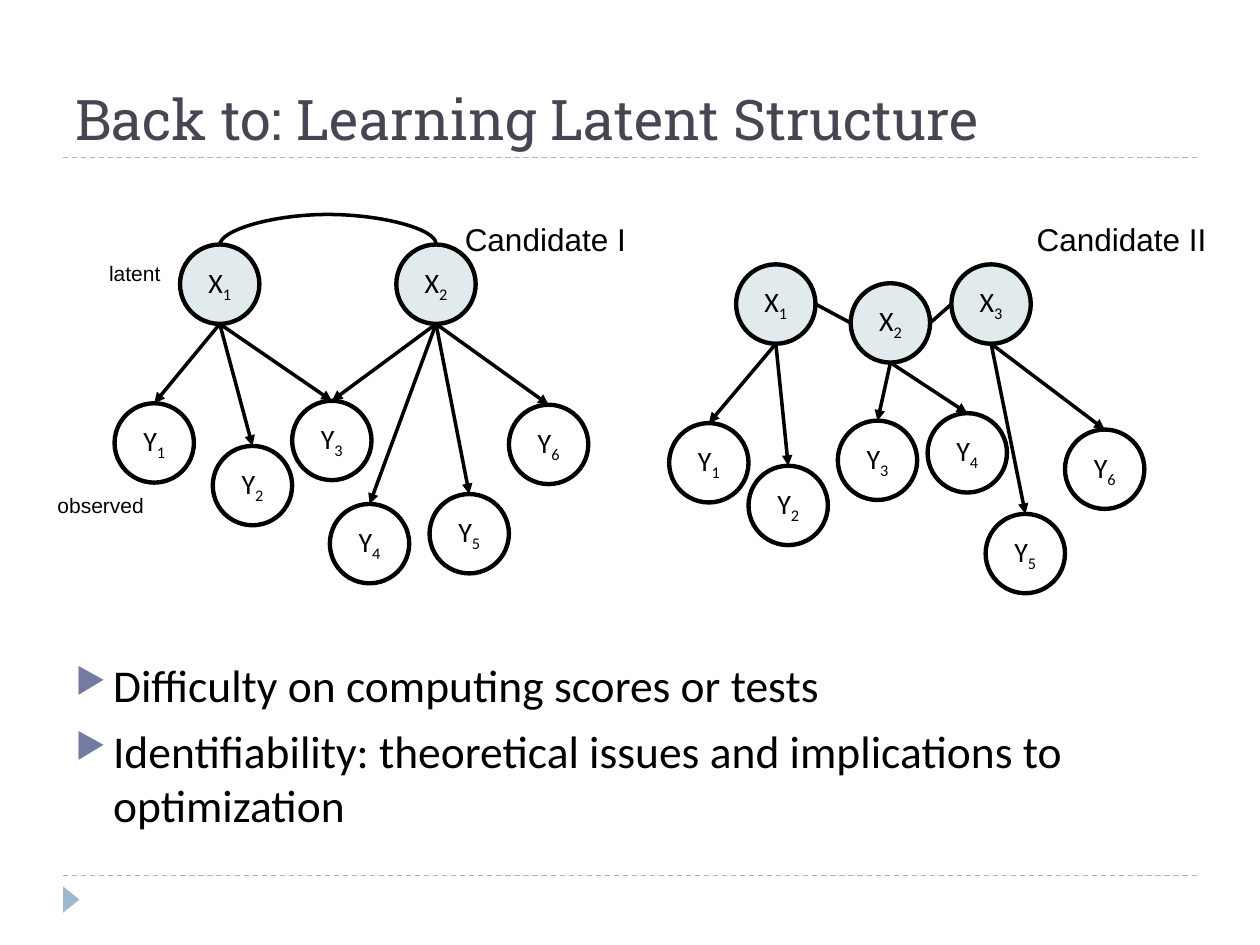
from lxml.etree import SubElement
from pptx import Presentation
from pptx.dml.color import RGBColor
from pptx.enum.dml import MSO_LINE
from pptx.enum.shapes import MSO_CONNECTOR, MSO_SHAPE
from pptx.enum.text import MSO_ANCHOR, PP_ALIGN
from pptx.oxml.ns import qn
from pptx.util import Cm, Pt

BLACK = RGBColor(0x00, 0x00, 0x00)
WHITE = RGBColor(0xFF, 0xFF, 0xFF)
PALE_BLUE = RGBColor(0xDD, 0xE9, 0xEC)
RULE_BLUE = RGBColor(0x9F, 0xB8, 0xCD)
TITLE_GREY = RGBColor(0x46, 0x46, 0x53)
BULLET_BLUE = RGBColor(0x72, 0x7C, 0xA3)

NODE = 1.6  # node diameter in cm


def style_font(para, name, size, color=BLACK):
    para.font.name = name
    para.font.size = Pt(size)
    para.font.color.rgb = color


def add_text(page, left, top, width, height, text, font, size,
             color=BLACK, wrap=False, anchor=MSO_ANCHOR.TOP):
    box = page.shapes.add_textbox(Cm(left), Cm(top), Cm(width), Cm(height))
    frame = box.text_frame
    frame.word_wrap = wrap
    frame.vertical_anchor = anchor
    frame.text = text
    for para in frame.paragraphs:
        style_font(para, font, size, color)
    return frame


def add_line(page, start, end, color=BLACK, width=2, arrow=False,
             kind=MSO_CONNECTOR.STRAIGHT):
    line = page.shapes.add_connector(kind, *(Cm(v) for v in (*start, *end)))
    line.line.color.rgb = color
    line.line.width = Pt(width)
    properties = line._element.spPr
    if arrow:
        SubElement(properties.find(qn("a:ln")), qn("a:tailEnd"), type="triangle")
    SubElement(properties, qn("a:effectLst"))
    return line


def add_arc(page, start, end, rise):
    """Join two points on one level by a curve that bulges upwards."""
    span, thin = end[0] - start[0], 0.03
    middle_x, middle_y = (start[0] + end[0]) / 2, start[1]
    # Drawn upright from bottom right to top left, then turned a quarter.
    arc = add_line(page,
                   (middle_x + thin / 2, middle_y + span / 2),
                   (middle_x - thin / 2, middle_y - span / 2),
                   kind=MSO_CONNECTOR.CURVE)
    properties = arc._element.spPr
    properties.find(qn("a:xfrm")).set("rot", str(90 * 60000))
    guides = properties.find(qn("a:prstGeom")).get_or_add_avLst()
    SubElement(guides, qn("a:gd"), name="adj1",
               fmla=f"val {round(rise / thin * 100000)}")


def add_node(page, left, top, name):
    """Draw a circle labelled with a letter and a subscript digit."""
    latent = name.startswith("X")
    node = page.shapes.add_shape(MSO_SHAPE.OVAL, Cm(left), Cm(top), Cm(NODE), Cm(NODE))
    node.shadow.inherit = False
    node.fill.solid()
    node.fill.fore_color.rgb = PALE_BLUE if latent else WHITE
    color = node._element.spPr.find(qn("a:solidFill")).find(qn("a:srgbClr"))
    SubElement(color, qn("a:alpha"), val="87000" if latent else "90000")
    node.line.color.rgb = BLACK
    node.line.width = Pt(2.5)
    frame = node.text_frame
    frame.vertical_anchor = MSO_ANCHOR.MIDDLE
    para = frame.paragraphs[0]
    para.alignment = PP_ALIGN.CENTER
    style_font(para, "Calibri", 16)
    para.add_run().text = name[0]
    subscript = para.add_run()
    subscript.text = name[1]
    subscript._r.get_or_add_rPr().set("baseline", "-25000")


def draw_graph(page, left, top, nodes, children):
    """Draw nodes and parent-to-child arrows; return each node's page position."""
    places = {name: (left + x, top + y) for name, (x, y) in nodes.items()}
    for name, place in places.items():
        add_node(page, *place, name)
    for parent, names in children.items():
        for child in names.split():
            add_line(page, side(places[parent], 0.5, 1), side(places[child], 0.5, 0),
                     arrow=True)
    return places


def side(place, across, down):
    """Return the point at these fractions of a node's box."""
    return place[0] + across * NODE, place[1] + down * NODE


def draw_candidate_one(page, left, top):
    nodes = {"Y1": (0, 3.2), "Y2": (1.98, 4.06), "Y3": (3.58, 3.15),
             "Y4": (4.34, 5.23), "Y5": (6.35, 5.03), "Y6": (7.95, 3.23),
             "X1": (1.32, 0), "X2": (5.68, 0)}
    places = draw_graph(page, left, top, nodes,
                        {"X1": "Y1 Y2 Y3", "X2": "Y3 Y4 Y5 Y6"})
    add_arc(page, side(places["X1"], 0.5, 0), side(places["X2"], 0.5, 0), 0.62)
    add_text(page, left - 0.36, top + 0.2, 1.55, 0.76, "latent", "Arial", 12)
    add_text(page, left - 1.4, top + 4.88, 2.26, 0.76, "observed", "Arial", 12)
    add_text(page, left + 6.81, top - 0.61, 3.78, 1.02, "Candidate I", "Arial", 18)


def draw_candidate_two(page, left, top):
    nodes = {"Y1": (0, 3.2), "Y2": (1.6, 4.06), "Y3": (3.4, 3.15),
             "Y4": (5.21, 3), "Y5": (6.38, 5.03), "Y6": (7.98, 3.33),
             "X1": (1.35, 0), "X2": (3.66, 0.38), "X3": (5.69, 0)}
    places = draw_graph(page, left, top, nodes,
                        {"X1": "Y1 Y2", "X2": "Y3 Y4", "X3": "Y5 Y6"})
    for first, second in (("X1", "X2"), ("X2", "X3")):
        add_line(page, side(places[first], 1, 0.5), side(places[second], 0, 0.5))
    add_text(page, left + 7.16, top - 1.02, 3.96, 1.02, "Candidate II", "Arial", 18)


def draw_frame(page, left, width):
    for y in (3.18, 17.65):
        rule = add_line(page, (left, y), (left + width, y), RULE_BLUE, 0.75)
        rule.line.dash_style = MSO_LINE.DASH
    marker = page.shapes.add_shape(MSO_SHAPE.ISOSCELES_TRIANGLE,
                                   Cm(left - 0.1), Cm(17.97), Cm(0.53), Cm(0.33))
    marker.rotation = 90
    marker.shadow.inherit = False
    marker.fill.solid()
    marker.fill.fore_color.rgb = RULE_BLUE
    marker.line.fill.background()


def draw_bullets(page, left, top, width, height, items):
    frame = add_text(page, left, top, width, height, "\n".join(items),
                     "Calibri", 26, wrap=True)
    for para in frame.paragraphs:
        para.space_before = Pt(6)
        properties = para._p.get_or_add_pPr()
        properties.set("marL", str(Cm(0.76)))
        properties.set("indent", str(-Cm(0.76)))
        bullet = [SubElement(properties, qn("a:buClr")),
                  SubElement(properties, qn("a:buSzPct"), val="76000"),
                  SubElement(properties, qn("a:buChar"), char="▶")]
        SubElement(bullet[0], qn("a:srgbClr"), val=str(BULLET_BLUE))
        # The schema wants bullet marks ahead of the default run properties.
        properties.append(properties.find(qn("a:defRPr")))


def main():
    deck = Presentation()
    deck.slide_width, deck.slide_height = Cm(25.4), Cm(19.05)
    page = deck.slides.add_slide(deck.slide_layouts[6])
    draw_frame(page, 1.27, 22.86)
    add_text(page, 1.27, 0.43, 22.86, 2.75, "Back to: Learning Latent Structure",
             "Roboto Slab", 32, TITLE_GREY, wrap=True, anchor=MSO_ANCHOR.BOTTOM)
    draw_bullets(page, 1.27, 13.13, 22.86, 3.99, [
        "Difficulty on computing scores or tests",
        "Identifiability: theoretical issues and implications to optimization"])
    draw_candidate_one(page, 2.31, 4.93)
    draw_candidate_two(page, 13.49, 5.33)
    deck.save("out.pptx")


if __name__ == "__main__":
    main()
